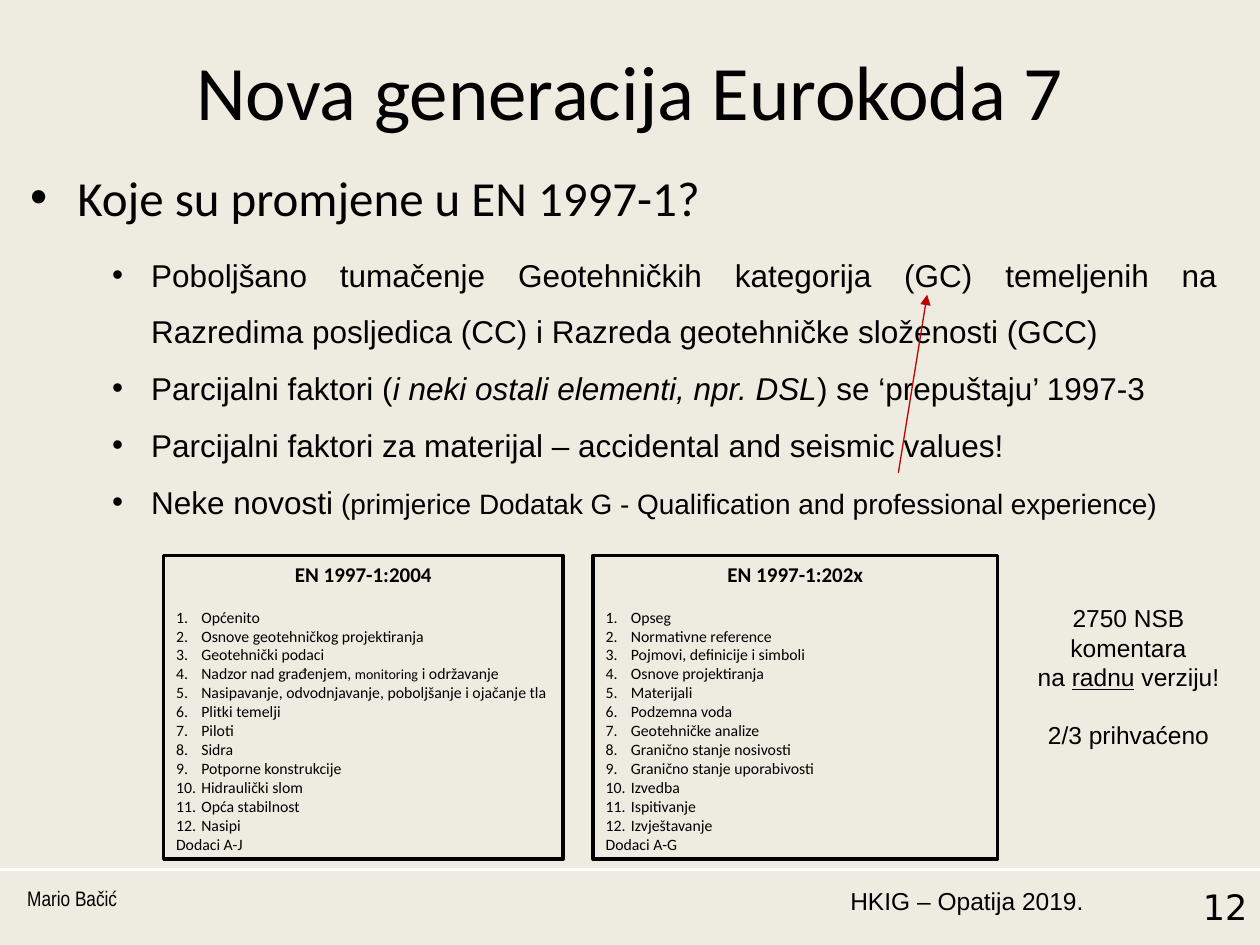
from dataclasses import dataclass
from typing import Optional

from lxml.etree import SubElement
from pptx import Presentation
from pptx.dml.color import RGBColor
from pptx.enum.shapes import MSO_CONNECTOR, MSO_SHAPE
from pptx.enum.text import MSO_ANCHOR, MSO_AUTO_SIZE, PP_ALIGN
from pptx.oxml.ns import qn
from pptx.util import Cm, Pt


@dataclass(frozen=True)
class Theme:
    back: str = "EEECE1"
    ink: str = "000000"
    white: str = "FFFFFF"
    red: str = "C00000"
    sans: str = "Arial"
    slim: str = "Arial Narrow"
    main: str = "Calibri"
    digit: str = "DejaVu Sans"
    title: int = 44
    lead: int = 28
    page: int = 20
    point: int = 18
    aside: int = 16
    note: int = 14
    head: int = 12
    item: int = 9
    tiny: int = 8


T = Theme()


@dataclass(frozen=True)
class Area:
    left: float
    top: float
    width: float
    height: float

    def size(self) -> tuple:
        return Cm(self.left), Cm(self.top), Cm(self.width), Cm(self.height)


@dataclass(frozen=True)
class Run:
    text: str
    size: int
    font: str = T.sans
    bold: bool = False
    slant: bool = False
    under: bool = False


@dataclass(frozen=True)
class Para:
    runs: list
    align: PP_ALIGN = PP_ALIGN.LEFT
    hang: float = 0
    mark: Optional[str] = None
    pitch: float = 1.0
    before: float = 0


@dataclass(frozen=True)
class Panel:
    area: Area
    head: str
    items: list
    tail: str


def color(code: str) -> RGBColor:
    return RGBColor.from_string(code)


def write(frame, paras: list, anchor=MSO_ANCHOR.TOP) -> None:
    frame.word_wrap = True
    frame.auto_size = MSO_AUTO_SIZE.NONE
    frame.vertical_anchor = anchor
    for i, para in enumerate(paras):
        line = frame.add_paragraph() if i else frame.paragraphs[0]
        props = line._p.get_or_add_pPr()
        if para.hang:
            props.set("marL", str(Cm(para.hang)))
            props.set("indent", str(-Cm(para.hang)))
        if para.mark == "1.":
            SubElement(props, qn("a:buFont"), typeface="+mj-lt")
            SubElement(props, qn("a:buAutoNum"), type="arabicPeriod")
        elif para.mark:
            SubElement(props, qn("a:buFont"), typeface=T.sans)
            SubElement(props, qn("a:buChar"), char=para.mark)
        line.alignment = para.align
        line.line_spacing = para.pitch
        line.space_before = Pt(para.before)
        for part in para.runs:
            run = line.add_run()
            run.text = part.text
            font = run.font
            font.name, font.size = part.font, Pt(part.size)
            font.bold, font.italic, font.underline = part.bold, part.slant, part.under
            font.color.rgb = color(T.ink)


def label(slide, area: Area, paras: list) -> None:
    write(slide.shapes.add_textbox(*area.size()).text_frame, paras)


def panel(slide, data: Panel) -> None:
    box = slide.shapes.add_shape(MSO_SHAPE.RECTANGLE, *data.area.size())
    box.shadow.inherit = False
    box.fill.background()
    box.line.color.rgb = color(T.ink)
    box.line.width = Pt(2)
    paras = [Para([Run(data.head, T.head, T.main, bold=True)], PP_ALIGN.CENTER)]
    for i, item in enumerate(data.items):
        runs = item if isinstance(item, list) else [Run(item, T.item, T.main)]
        paras.append(Para(runs, hang=0.51, mark="1.", before=0 if i else 12))
    paras.append(Para([Run(data.tail, T.item, T.main)], hang=0.51))
    write(box.text_frame, paras, MSO_ANCHOR.MIDDLE)


def rule(slide, start: tuple, end: tuple, tint: str, width: float, arrow: bool = False) -> None:
    line = slide.shapes.add_connector(
        MSO_CONNECTOR.STRAIGHT, *(Cm(v) for v in start + end))
    line.line.color.rgb = color(tint)
    line.line.width = Pt(width)
    if arrow:
        SubElement(line.line._get_or_add_ln(), qn("a:tailEnd"), type="triangle")
    SubElement(line._element.spPr, qn("a:effectLst"))


def point(*runs: Run) -> Para:
    return Para(list(runs), PP_ALIGN.JUSTIFY, 0.79, "•", 1.5)


OLD = Panel(Area(3.3, 11.2, 8.05, 6.12), "EN 1997-1:2004", [
    "Općenito", "Osnove geotehničkog projektiranja", "Geotehnički podaci",
    [Run("Nadzor nad građenjem, ", T.item, T.main),
     Run("monitoring", T.tiny, T.main),
     Run(" i održavanje", T.item, T.main)],
    "Nasipavanje, odvodnjavanje, poboljšanje i ojačanje tla",
    "Plitki temelji", "Piloti", "Sidra", "Potporne konstrukcije",
    "Hidraulički slom", "Opća stabilnost", "Nasipi"], "Dodaci A-J")
NEW = Panel(Area(11.96, 11.2, 8.15, 6.12), "EN 1997-1:202x", [
    "Opseg", "Normativne reference", "Pojmovi, definicije i simboli",
    "Osnove projektiranja", "Materijali", "Podzemna voda",
    "Geotehničke analize", "Granično stanje nosivosti",
    "Granično stanje uporabivosti", "Izvedba", "Ispitivanje",
    "Izvještavanje"], "Dodaci A-G")
POINTS = [
    point(Run("Poboljšano tumačenje Geotehničkih kategorija (GC) temeljenih na "
              "Razredima posljedica (CC) i Razreda geotehničke složenosti (GCC)", T.point)),
    point(Run("Parcijalni faktori (", T.point),
          Run("i neki ostali elementi, npr. DSL", T.point, slant=True),
          Run(") se ‘prepuštaju’ 1997-3", T.point)),
    point(Run("Parcijalni faktori za materijal – accidental and seismic values!", T.point)),
    point(Run("Neke novosti", T.point),
          Run(" (primjerice Dodatak G - Qualification and professional experience)", T.aside)),
]
NOTES = [
    Para([Run("2750 NSB komentara", T.note)], PP_ALIGN.CENTER),
    Para([Run("na ", T.note), Run("radnu", T.note, under=True),
          Run(" verziju!", T.note)], PP_ALIGN.CENTER),
    Para([Run("2/3 prihvaćeno", T.note)], PP_ALIGN.CENTER, before=16),
]


def main() -> None:
    deck = Presentation()
    deck.slide_width, deck.slide_height = Cm(25.4), Cm(19.05)
    slide = deck.slides.add_slide(deck.slide_layouts[5])
    slide.background.fill.solid()
    slide.background.fill.fore_color.rgb = color(T.back)
    rule(slide, (0, 17.53), (25.4, 17.53), T.white, 1.5)
    title = slide.shapes.title
    title.left, title.top, title.width, title.height = Area(1.27, 0.76, 22.86, 3.18).size()
    write(title.text_frame, [
        Para([Run("Nova generacija Eurokoda 7", T.title, T.main)], PP_ALIGN.CENTER)])
    label(slide, Area(0.36, 3.25, 22.86, 12.57), [
        Para([Run("Koje su promjene u EN 1997-1?", T.lead, T.main)], hang=0.95, mark="•")])
    label(slide, Area(16.69, 17.73, 5.41, 1.32), [
        Para([Run("HKIG – Opatija 2019.", T.note)], PP_ALIGN.RIGHT)])
    label(slide, Area(0.3, 17.73, 16.61, 1.32), [
        Para([Run("Mario Bačić", T.head, T.slim)])])
    label(slide, Area(22.3, 17.73, 3.1, 1.32), [
        Para([Run("12", T.page, T.digit)], PP_ALIGN.RIGHT)])
    label(slide, Area(2.01, 4.65, 22.78, 8.33), POINTS)
    for data in (OLD, NEW):
        panel(slide, data)
    label(slide, Area(20.4, 12.04, 4.7, 3.25), NOTES)
    rule(slide, (18.11, 9.53), (18.69, 5.94), T.red, 0.75, arrow=True)
    deck.save("out.pptx")


if __name__ == "__main__":
    main()
